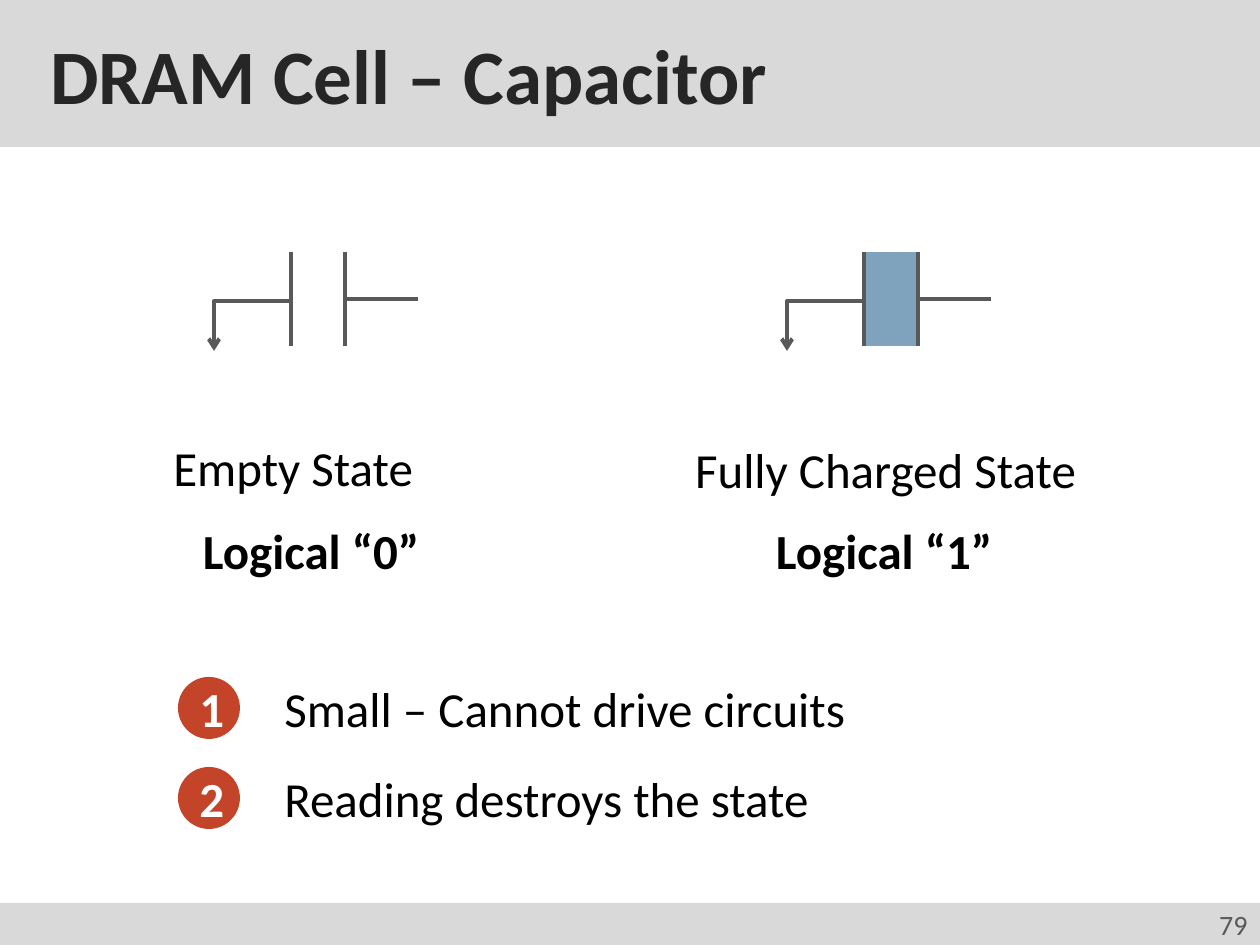
from lxml import etree
from pptx import Presentation
from pptx.dml.color import RGBColor
from pptx.enum.shapes import MSO_CONNECTOR, MSO_SHAPE
from pptx.enum.text import MSO_ANCHOR, PP_ALIGN
from pptx.oxml.ns import qn
from pptx.util import Pt

SCALE = 914400 / 126
FONT = "Calibri"
BAR = RGBColor(0xD9, 0xD9, 0xD9)
INK = RGBColor(0x26, 0x26, 0x26)
WIRE = RGBColor(0x59, 0x59, 0x59)
CHARGE = RGBColor(0x80, 0xA3, 0xBD)
RED = RGBColor(0xC4, 0x44, 0x2A)
BLACK = RGBColor(0, 0, 0)
WHITE = RGBColor(255, 255, 255)
LINE, ELBOW = MSO_CONNECTOR.STRAIGHT, MSO_CONNECTOR.ELBOW
RECT, OVAL = MSO_SHAPE.RECTANGLE, MSO_SHAPE.OVAL
LEFT, MID, RIGHT = PP_ALIGN.LEFT, PP_ALIGN.CENTER, PP_ALIGN.RIGHT
MIDDLE = MSO_ANCHOR.MIDDLE


def px(*vals):
    """Turn px lengths into EMU."""
    return [round(val * SCALE) for val in vals]


class Deck:
    """Hold the style and the current slide."""

    def __init__(self):
        self.prs = Presentation()
        self.prs.slide_width, self.prs.slide_height = px(1260, 945)
        self.slide = self.prs.slides.add_slide(self.prs.slide_layouts[5])

    def text(self, shape, words, size=28, color=BLACK, bold=False, align=LEFT):
        frame = shape.text_frame
        frame.text = words
        para = frame.paragraphs[0]
        para.alignment = align
        font = para.runs[0].font
        font.name, font.size, font.bold = FONT, Pt(size), bold
        font.color.rgb = color

    def title(self, words, box):
        shape = self.slide.shapes.title
        shape.left, shape.top, shape.width, shape.height = px(*box)
        shape.fill.solid()
        shape.fill.fore_color.rgb = BAR
        frame = shape.text_frame
        frame.margin_left = px(50)[0]
        frame.vertical_anchor = MIDDLE
        self.text(shape, words, 44, INK, True)

    def shape(self, kind, box, fill, home=None):
        home = home or self.slide
        shape = home.shapes.add_shape(kind, *px(*box))
        shape.shadow.inherit = False
        shape.fill.solid()
        shape.fill.fore_color.rgb = fill
        shape.line.fill.background()
        shape.text_frame.vertical_anchor = MIDDLE
        return shape

    def label(self, words, box, **style):
        shape = self.slide.shapes.add_textbox(*px(*box))
        shape.text_frame.word_wrap = True
        self.text(shape, words, **style)

    def badge(self, words, box):
        shape = self.shape(OVAL, box, RED)
        self.text(shape, words, color=WHITE, bold=True, align=MID)

    def wire(self, home, ends, kind=LINE):
        line = home.shapes.add_connector(kind, *px(*ends))
        line.line.color.rgb = WIRE
        line.line.width = Pt(2.25)
        etree.SubElement(line._element.spPr, qn("a:effectLst"))
        return line

    def ground(self, home, ends):
        line = self.wire(home, ends, ELBOW)
        props = line._element.spPr
        props.find(qn("a:prstGeom")).set("prst", "bentConnector2")
        frame = props.find(qn("a:xfrm"))
        frame.set("rot", "10800000")
        frame.set("flipV", "1")
        etree.SubElement(props.find(qn("a:ln")), qn("a:tailEnd"), type="arrow")

    def cell(self, left, full=False):
        top, low, gap = 252, 346, 54
        mid, right = (top + low) // 2, left + gap
        group = self.slide.shapes.add_group_shape()
        if full:
            core = self.shape(RECT, (left, top, gap, low - top), CHARGE, group)
        for side in (left, right):
            self.wire(group, (side, top, side, low))
        lead = self.wire(group, (right, mid, right + 73, mid))
        if full:
            lead.begin_connect(core, 3)
        self.ground(group, (left - 77, 301, left, 351))


def main():
    deck = Deck()
    deck.shape(RECT, (0, 903, 630, 42), BAR)
    deck.title("DRAM Cell – Capacitor", (0, 0, 1260, 147))
    foot = deck.shape(RECT, (630, 903, 630, 42), BAR)
    deck.text(foot, "79", 16, WIRE, align=RIGHT)

    deck.cell(291)
    deck.cell(864, full=True)

    deck.label("Empty State", (161, 431, 302, 72))
    deck.label("Fully Charged State", (651, 433, 469, 72), align=MID)
    for bit, left in enumerate((170, 743)):
        deck.label(f"Logical “{bit}”", (left, 514, 282, 72), bold=True, align=MID)

    notes = ("Small – Cannot drive circuits", "Reading destroys the state")
    for row, note in enumerate(notes):
        top = 672 + 90 * row
        deck.badge(str(row + 1), (178, top + 5, 62, 62))
        deck.label(note, (272, top, 673, 72))

    deck.prs.save("out.pptx")


if __name__ == "__main__":
    main()
